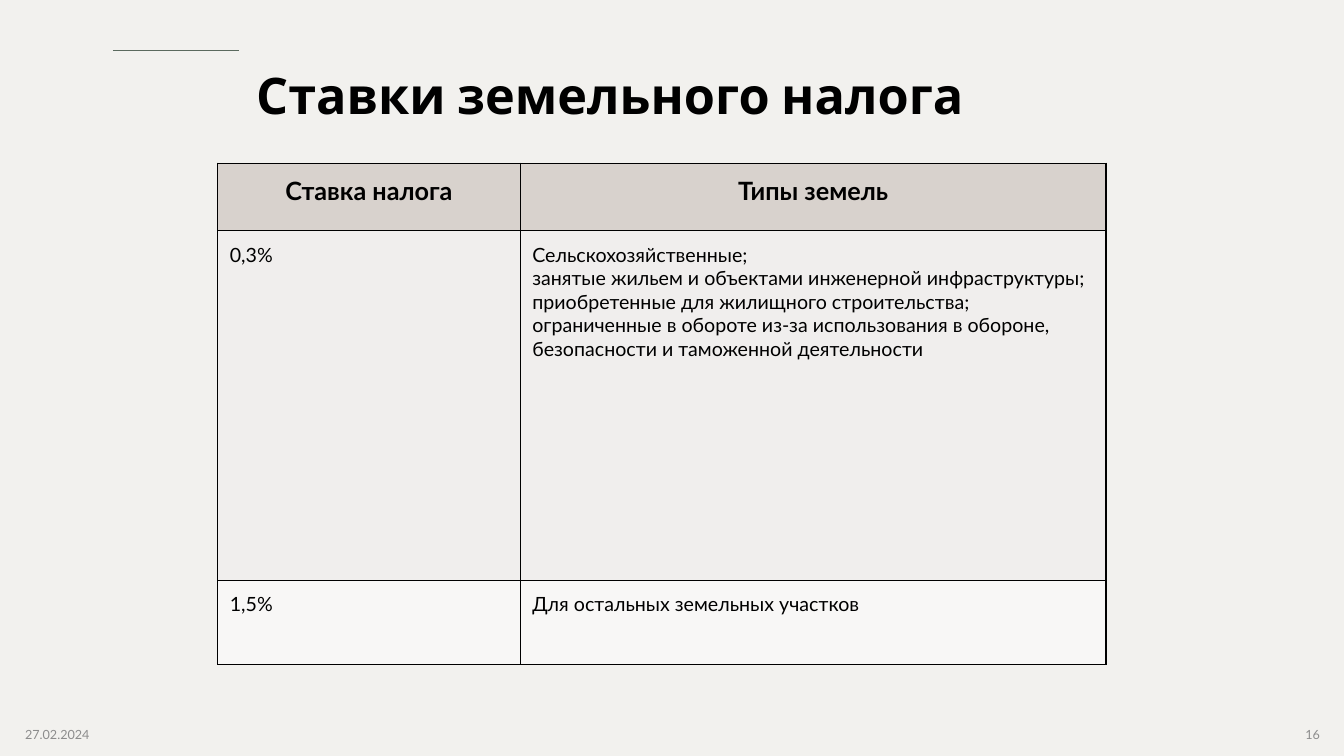
from lxml import etree
from pptx import Presentation
from pptx import util as u
from pptx.dml.color import RGBColor
from pptx.enum import shapes, text
from pptx.oxml import ns

COLORS = {
    "background": "F2F1EE",
    "accent": "5B6A5E",
    "footer": "8C8C8C",
    "ink": "000000",
    "header": "D8D2CD",
    "band": "F0EEED",
    "plain": "F8F7F6",
}


def format_text(p, font, size, color, bold=False, align=text.PP_ALIGN.LEFT):
    p.alignment = align
    for r in p.runs:
        r.font.name = font
        r.font.size = u.Pt(size)
        r.font.bold = bold
        r.font.color.rgb = RGBColor.from_string(COLORS[color])


def add_borders(cell, color, width):
    tcPr = cell._tc.get_or_add_tcPr()
    for i, side in enumerate(("lnL", "lnR", "lnT", "lnB")):
        ln = etree.Element(ns.qn(f"a:{side}"), w=str(u.Pt(width)))
        fill = etree.SubElement(ln, ns.qn("a:solidFill"))
        etree.SubElement(fill, ns.qn("a:srgbClr"), val=COLORS[color])
        tcPr.insert(i, ln)


prs = Presentation()
prs.slide_width = u.Inches(13.33)
prs.slide_height = u.Inches(7.5)
s = prs.slides.add_slide(prs.slide_layouts[5])
s.background.fill.solid()
s.background.fill.fore_color.rgb = RGBColor.from_string(COLORS["background"])

rule = s.shapes.add_connector(
    shapes.MSO_CONNECTOR.STRAIGHT,
    u.Inches(1.12), u.Inches(0.5), u.Inches(2.37), u.Inches(0.5),
)
rule.line.color.rgb = RGBColor.from_string(COLORS["accent"])
rule.line.width = u.Pt(1.25)
etree.SubElement(rule._element.spPr, ns.qn("a:effectLst"))

for left, label, align in (
    (0.15, "27.02.2024", text.PP_ALIGN.LEFT),
    (10.19, "16", text.PP_ALIGN.RIGHT),
):
    sp = s.shapes.add_textbox(u.Inches(left), u.Inches(7.09), u.Inches(3), u.Inches(0.4))
    tf = sp.text_frame
    tf.word_wrap = True
    tf.vertical_anchor = text.MSO_ANCHOR.MIDDLE
    tf.text = label
    format_text(tf.paragraphs[0], "Lato", 9, "footer", align=align)

title = s.shapes.title
title.left, title.top = u.Inches(1.09), u.Inches(0.65)
title.width, title.height = u.Inches(9.92), u.Inches(2.45)
tf = title.text_frame
tf.text = "Ставки земельного налога"
tf.word_wrap = True
tf.auto_size = text.MSO_AUTO_SIZE.NONE
tf.vertical_anchor = text.MSO_ANCHOR.TOP
p = tf.paragraphs[0]
p.line_spacing = 0.9
format_text(p, "Cabin", 36, "ink", True, text.PP_ALIGN.CENTER)

rows = [
    (0.67, "header", ("Ставка налога", "Типы земель")),
    (3.47, "band", (
        "0,3%",
        "Сельскохозяйственные;\v"
        "занятые жильем и объектами инженерной инфраструктуры;\v"
        "приобретенные для жилищного строительства;\v"
        "ограниченные в обороте из-за использования в обороне, "
        "безопасности и таможенной деятельности",
    )),
    (0.83, "plain", ("1,5%", "Для остальных земельных участков")),
]
table = s.shapes.add_table(
    len(rows), 2, u.Inches(2.16), u.Inches(1.62), u.Inches(8.81), u.Inches(4.97)
).table
for column, width in zip(table.columns, (3, 5.81)):
    column.width = u.Inches(width)

for i, (height, fill, labels) in enumerate(rows):
    table.rows[i].height = u.Inches(height)
    for j, label in enumerate(labels):
        cell = table.cell(i, j)
        cell.margin_left = cell.margin_right = u.Inches(0.12)
        cell.margin_top = cell.margin_bottom = u.Inches(0.12)
        cell.fill.solid()
        cell.fill.fore_color.rgb = RGBColor.from_string(COLORS[fill])
        add_borders(cell, "ink", 1)
        p = cell.text_frame.paragraphs[0]
        p.text = label
        if i == 0:
            format_text(p, "Lato", 18, "ink", True, text.PP_ALIGN.CENTER)
        else:
            format_text(p, "Lato", 14, "ink")

prs.save("out.pptx")
